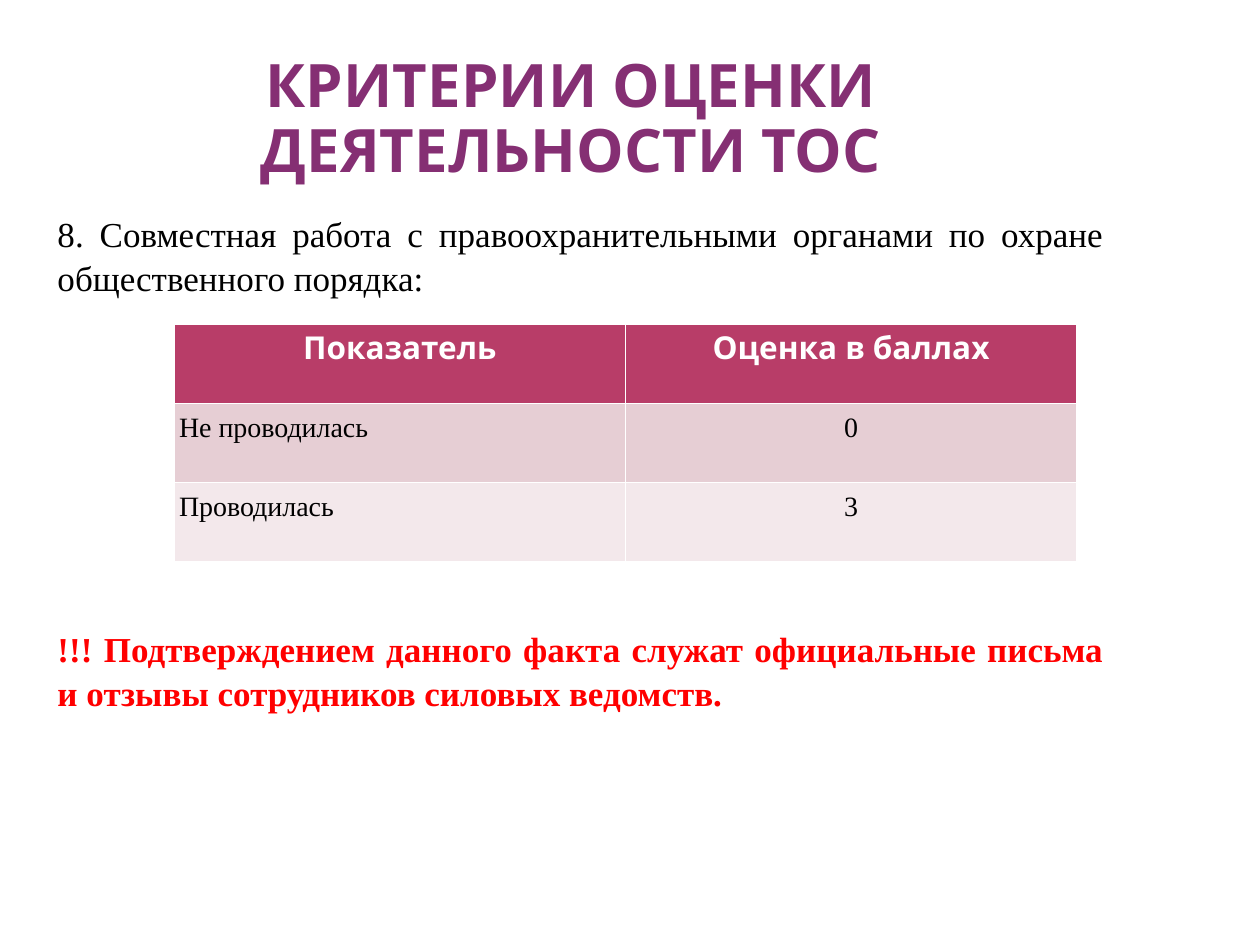
import pptx
import pptx.util
import pptx.dml.color
import pptx.enum.text

Cm = pptx.util.Cm
Pt = pptx.util.Pt
RGBColor = pptx.dml.color.RGBColor
ALIGN = pptx.enum.text.PP_ALIGN
ANCHOR = pptx.enum.text.MSO_ANCHOR

PLUM = RGBColor(0x85, 0x2F, 0x73)
CRIMSON = RGBColor(0xB8, 0x3D, 0x68)
ROSE = RGBColor(0xE6, 0xCE, 0xD4)
PALE_ROSE = RGBColor(0xF3, 0xE8, 0xEB)
WHITE = RGBColor(0xFF, 0xFF, 0xFF)
BLACK = RGBColor(0, 0, 0)
RED = RGBColor(0xFF, 0, 0)


class CriteriaSlide:
    heading_font = "Karla"
    text_font = "Times New Roman"

    def __init__(self, deck):
        self.slide = deck.slides.add_slide(deck.slide_layouts[5])

    def fill_paragraph(self, paragraph, text, font, size, color, bold, align):
        paragraph.text = text
        paragraph.alignment = align
        for run in paragraph.runs:
            run.font.name = font
            run.font.size = Pt(size)
            run.font.bold = bold
            run.font.color.rgb = color

    def title(self, text, left, top, width, height):
        heading = self.slide.shapes.title
        heading.left, heading.top = Cm(left), Cm(top)
        heading.width, heading.height = Cm(width), Cm(height)
        frame = heading.text_frame
        frame.word_wrap = True
        frame.auto_size = pptx.enum.text.MSO_AUTO_SIZE.NONE
        frame.vertical_anchor = ANCHOR.BOTTOM
        frame.margin_left = frame.margin_right = Cm(0.13)
        frame.margin_top = frame.margin_bottom = 0
        self.fill_paragraph(frame.paragraphs[0], text, self.heading_font, 34.2,
                            PLUM, True, ALIGN.CENTER)
        frame.paragraphs[0].line_spacing = 0.9

    def body(self, criterion, note, note_gap, left, top, width, height):
        """Criterion text, then a red note note_gap points below it."""
        frame = self.slide.shapes.add_textbox(
            Cm(left), Cm(top), Cm(width), Cm(height)).text_frame
        frame.word_wrap = True
        frame.margin_left = Cm(0.45)
        remark = frame.add_paragraph()
        remark.space_before = Pt(note_gap)
        for paragraph, text, color, bold in (
                (frame.paragraphs[0], criterion, BLACK, False),
                (remark, note, RED, True)):
            self.fill_paragraph(paragraph, text, self.text_font, 20, color,
                                bold, ALIGN.JUSTIFY)
            paragraph.line_spacing = 1.05

    def scores(self, rows, left, top, width, row_height):
        table = self.slide.shapes.add_table(
            len(rows), len(rows[0]), Cm(left), Cm(top), Cm(width),
            Cm(row_height * len(rows))).table
        for r, row in enumerate(rows):
            for c, text in enumerate(row):
                cell = table.cell(r, c)
                cell.fill.solid()
                cell.fill.fore_color.rgb = (CRIMSON, ROSE, PALE_ROSE)[r]
                paragraph = cell.text_frame.paragraphs[0]
                if r == 0:
                    self.fill_paragraph(paragraph, text, self.heading_font, 18,
                                        WHITE, True, ALIGN.CENTER)
                    continue
                cell.margin_left = cell.margin_right = Cm(0.1)
                cell.margin_top = cell.margin_bottom = Cm(0.18)
                self.fill_paragraph(paragraph, text, self.text_font, 16, BLACK,
                                    False, ALIGN.CENTER if c else ALIGN.JUSTIFY)


def main():
    deck = pptx.Presentation()
    deck.slide_width, deck.slide_height = Cm(25.4), Cm(19.05)
    criteria = CriteriaSlide(deck)
    criteria.title("КРИТЕРИИ ОЦЕНКИ ДЕЯТЕЛЬНОСТИ ТОС", 0.51, 0.76, 22, 2.97)
    criteria.body(
        "8. Совместная работа с правоохранительными органами по охране "
        "общественного порядка:",
        "!!! Подтверждением данного факта служат официальные письма и отзывы "
        "сотрудников силовых ведомств.",
        187, 0.71, 4.11, 21.79, 12.9)
    criteria.scores([("Показатель", "Оценка в баллах"),
                     ("Не проводилась", "0"),
                     ("Проводилась", "3")], 3.51, 6.53, 18.2, 1.6)
    deck.save("out.pptx")


if __name__ == "__main__":
    main()
